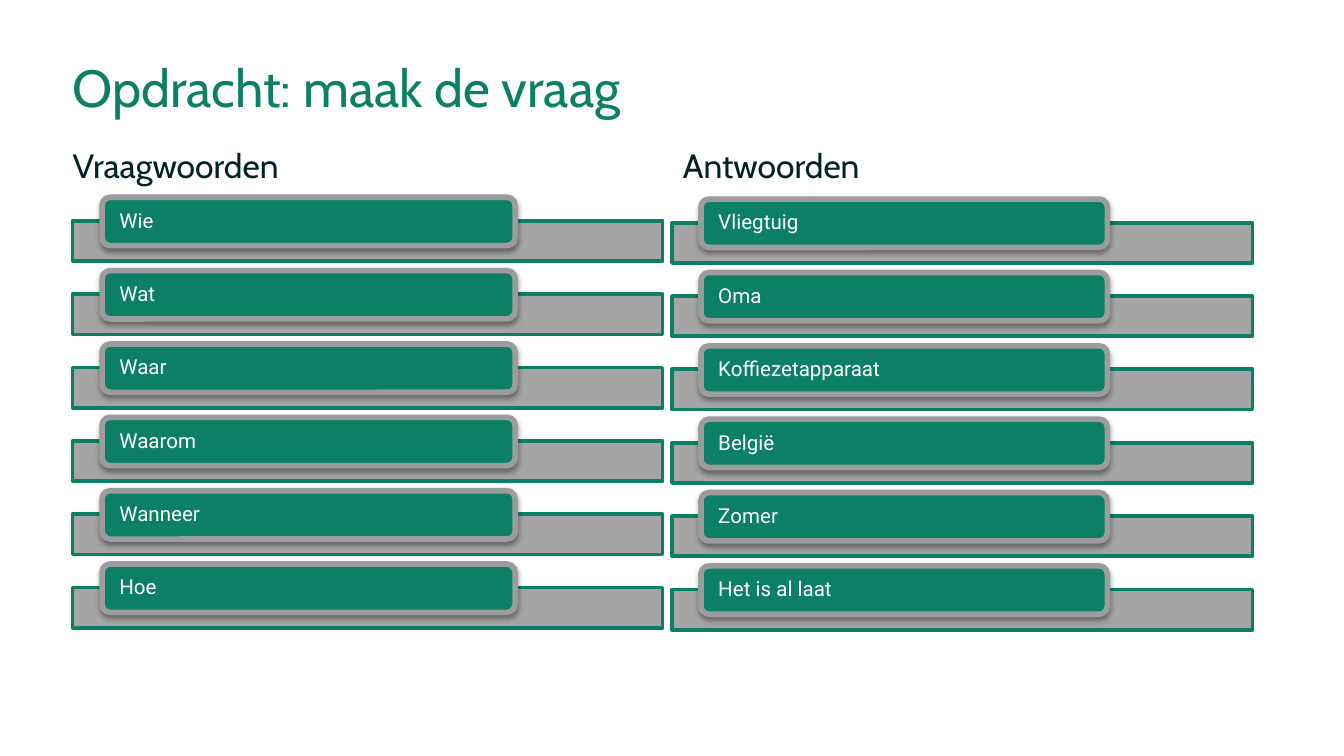
from dataclasses import dataclass

from lxml import etree
from pptx import Presentation
from pptx.dml.color import RGBColor
from pptx.enum import shapes, text
from pptx.oxml import ns
from pptx.util import Pt


@dataclass(frozen=True)
class Theme:
    green: RGBColor = RGBColor(0x0C, 0x80, 0x66)
    grey: RGBColor = RGBColor(0x9C, 0x9C, 0x9C)
    dark: RGBColor = RGBColor(0x00, 0x23, 0x28)
    white: RGBColor = RGBColor(0xFF, 0xFF, 0xFF)
    heading_font: str = "Cabin"
    label_font: str = "Roboto"
    title_size: int = 28
    heading_size: int = 18
    label_size: int = 11


THEME = Theme()
ROW_PITCH = 39.3
BAR_HEIGHT = 21.6
PILL_HEIGHT = 25.9
PILL_RISE = 12.6      # how far a pill stands above its bar
PILL_SHARE = 0.7      # pill width as a share of the bar
INDENT_SHARE = 0.05   # pill indent as a share of the bar


def set_values(target, values):
    for name, value in values.items():
        setattr(target, name, value)


def write_text(shape, words, font, frame=None, spacing=None):
    """Put one formatted paragraph in a shape."""
    set_values(shape.text_frame, {
        "word_wrap": True, "margin_left": 0, "margin_right": 0,
        "margin_top": 0, "margin_bottom": 0, **(frame or {})})
    paragraph = shape.text_frame.paragraphs[0]
    set_values(paragraph, {"alignment": text.PP_ALIGN.LEFT, **(spacing or {})})
    run = paragraph.add_run()
    run.text = words
    color = font["color"]
    set_values(run.font, {"name": font["name"], "size": Pt(font["size"])})
    run.font.color.rgb = color


def add_heading(slide, box, words, size, color, line_spacing):
    """Title or column heading."""
    shape = slide.shapes.add_textbox(*map(Pt, box))
    write_text(shape, words,
               {"name": THEME.heading_font, "size": size, "color": color},
               spacing={"line_spacing": Pt(line_spacing)})


def add_block(group, kind, box, fill, line, line_width):
    shape = group.shapes.add_shape(kind, *map(Pt, box))
    shape.shadow.inherit = False
    shape.fill.solid()
    shape.fill.fore_color.rgb = fill
    shape.line.color.rgb = line
    shape.line.width = Pt(line_width)
    return shape


def add_alpha(color_element, percent):
    etree.SubElement(color_element, ns.qn("a:alpha"), val=str(percent * 1000))


def add_shadow(shape):
    """Soft shadow straight below the shape."""
    effects = shape._element.spPr.find(ns.qn("a:effectLst"))
    shadow = etree.SubElement(
        effects, ns.qn("a:outerShdw"), blurRad=str(Pt(3.1)),
        dist=str(Pt(1.6)), dir="5400000", rotWithShape="0")
    color = etree.SubElement(shadow, ns.qn("a:srgbClr"), val="000000")
    add_alpha(color, 38)


def add_row(group, left, top, width, words):
    """A grey bar with a labelled green pill over it."""
    bar = add_block(group, shapes.MSO_SHAPE.RECTANGLE,
                    (left, top, width, BAR_HEIGHT), THEME.grey, THEME.green, 2)
    add_alpha(bar._element.spPr.find(".//" + ns.qn("a:srgbClr")), 90)

    pill_box = (left + width * INDENT_SHARE, top - PILL_RISE,
                width * PILL_SHARE, PILL_HEIGHT)
    pill = add_block(group, shapes.MSO_SHAPE.ROUNDED_RECTANGLE,
                     pill_box, THEME.green, THEME.grey, 3)
    add_shadow(pill)
    write_text(pill, words,
               {"name": THEME.label_font, "size": THEME.label_size,
                "color": THEME.white},
               frame={"margin_left": Pt(8), "margin_right": Pt(8),
                      "vertical_anchor": text.MSO_ANCHOR.MIDDLE},
               spacing={"line_spacing": 0.9})


def add_word_list(slide, left, top, width, words):
    """A column of rows at an even pitch."""
    group = slide.shapes.add_group_shape()
    for index, word in enumerate(words):
        add_row(group, left, top + index * ROW_PITCH, width, word)


def main():
    presentation = Presentation()
    presentation.slide_width, presentation.slide_height = Pt(720), Pt(405)
    slide = presentation.slides.add_slide(presentation.slide_layouts[6])

    # Title
    add_heading(slide, (38.9, 31, 643.7, 45.4), "Opdracht: maak de vraag",
                THEME.title_size, THEME.green, 32)

    # Column headings
    for left, words in ((38.9, "Vraagwoorden"), (365.8, "Antwoorden")):
        add_heading(slide, (left, 76.3, 315, 25.2), words,
                    THEME.heading_size, THEME.dark, 23)

    # Question words and answers
    add_word_list(slide, 38.9, 118.3, 316.1,
                  ("Wie", "Wat", "Waar", "Waarom", "Wanneer", "Hoe"))
    add_word_list(slide, 360, 119.3, 311,
                  ("Vliegtuig", "Oma", "Koffiezetapparaat", "België",
                   "Zomer", "Het is al laat"))

    presentation.save("out.pptx")


if __name__ == "__main__":
    main()
